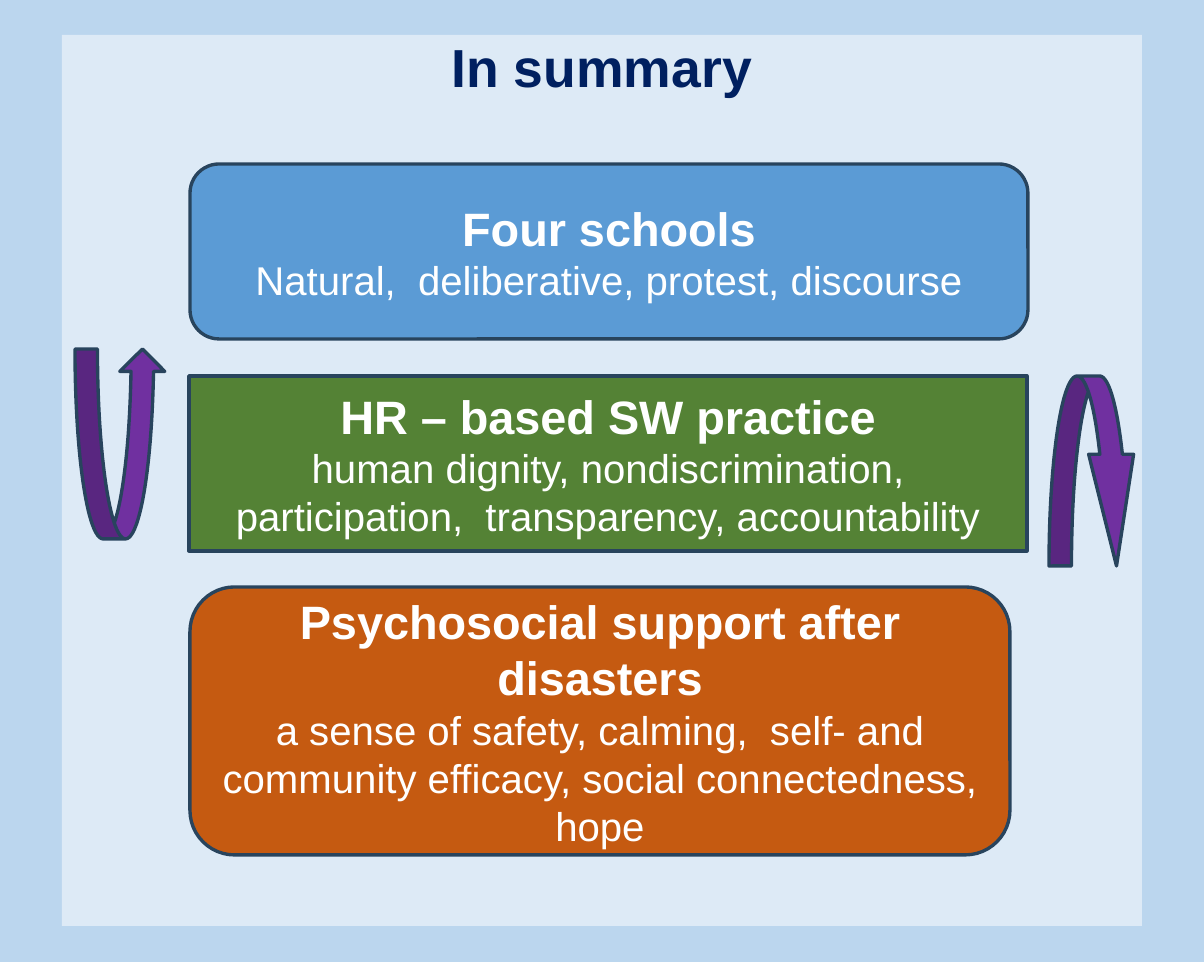
from dataclasses import dataclass

from pptx import Presentation
from pptx.dml.color import RGBColor
from pptx.enum.shapes import MSO_SHAPE
from pptx.enum.text import MSO_ANCHOR, MSO_AUTO_SIZE, PP_ALIGN
from pptx.util import Emu, Pt

EMU_PER_PX = 7595


@dataclass(frozen=True)
class Theme:
    font: str = "Arial"
    backdrop: str = "BBD6EE"
    panel: str = "DDEAF6"
    title: str = "002060"
    text: str = "FFFFFF"
    outline: str = "28445D"
    schools: str = "5B9BD5"
    practice: str = "548235"
    support: str = "C55A11"
    arrow: str = "7030A0"
    title_size: int = 32
    heading_size: int = 28
    body_size: int = 24
    outline_width: int = 2


THEME = Theme()


def px(length):
    return Emu(length * EMU_PER_PX)


def paint(fill, color):
    fill.solid()
    fill.fore_color.rgb = RGBColor.from_string(color)


def write(paragraph, text, *, size, color=THEME.text, bold=False, spacing=1.0):
    paragraph.alignment = PP_ALIGN.CENTER
    paragraph.line_spacing = spacing
    run = paragraph.add_run()
    run.text = text
    run.font.name = THEME.font
    run.font.size = Pt(size)
    run.font.bold = bold
    run.font.color.rgb = RGBColor.from_string(color)


def add_title_panel(slide, text, left, top, width, height):
    """Use the title placeholder as the pale panel behind the content."""
    panel = slide.shapes.title
    panel.left, panel.top = px(left), px(top)
    panel.width, panel.height = px(width), px(height)
    paint(panel.fill, THEME.panel)
    frame = panel.text_frame
    frame.word_wrap = True
    frame.auto_size = MSO_AUTO_SIZE.NONE
    frame.vertical_anchor = MSO_ANCHOR.TOP
    write(frame.paragraphs[0], text, size=THEME.title_size,
          color=THEME.title, bold=True, spacing=0.9)


def add_outlined(slide, kind, box, color):
    shape = slide.shapes.add_shape(kind, *map(px, box))
    shape.shadow.inherit = False
    paint(shape.fill, color)
    shape.line.color.rgb = RGBColor.from_string(THEME.outline)
    shape.line.width = Pt(THEME.outline_width)
    return shape


def add_topic(slide, kind, box, color, heading, details):
    frame = add_outlined(slide, kind, box, color).text_frame
    frame.word_wrap = True
    frame.vertical_anchor = MSO_ANCHOR.MIDDLE
    write(frame.paragraphs[0], heading, size=THEME.heading_size, bold=True)
    for detail in details:
        write(frame.add_paragraph(), detail, size=THEME.body_size)


def add_arrow(slide, kind, left, top, head_length=0.25):
    arrow = add_outlined(slide, kind, (left, top, 90, 190), THEME.arrow)
    arrow.adjustments[2] = head_length


def main():
    deck = Presentation()
    deck.slide_width, deck.slide_height = px(1204), px(962)
    slide = deck.slides.add_slide(deck.slide_layouts[5])
    paint(slide.background.fill, THEME.backdrop)
    add_title_panel(slide, "In summary", 62, 35, 1080, 891)

    topics = [
        (MSO_SHAPE.ROUNDED_RECTANGLE, (190, 164, 838, 175), THEME.schools,
         "Four schools", ["Natural,  deliberative, protest, discourse"]),
        (MSO_SHAPE.RECTANGLE, (189, 376, 838, 175), THEME.practice,
         "HR – based SW practice",
         ["human dignity, nondiscrimination, participation,  transparency, "
          "accountability"]),
        (MSO_SHAPE.ROUNDED_RECTANGLE, (190, 587, 820, 268), THEME.support,
         "Psychosocial support after disasters",
         ["a sense of safety, calming,  self- and community efficacy, "
          "social connectedness,", "hope"]),
    ]
    for topic in topics:
        add_topic(slide, *topic)

    add_arrow(slide, MSO_SHAPE.CURVED_DOWN_ARROW, 1049, 376, head_length=1.24)
    add_arrow(slide, MSO_SHAPE.CURVED_UP_ARROW, 75, 349)
    deck.save("out.pptx")


if __name__ == "__main__":
    main()
